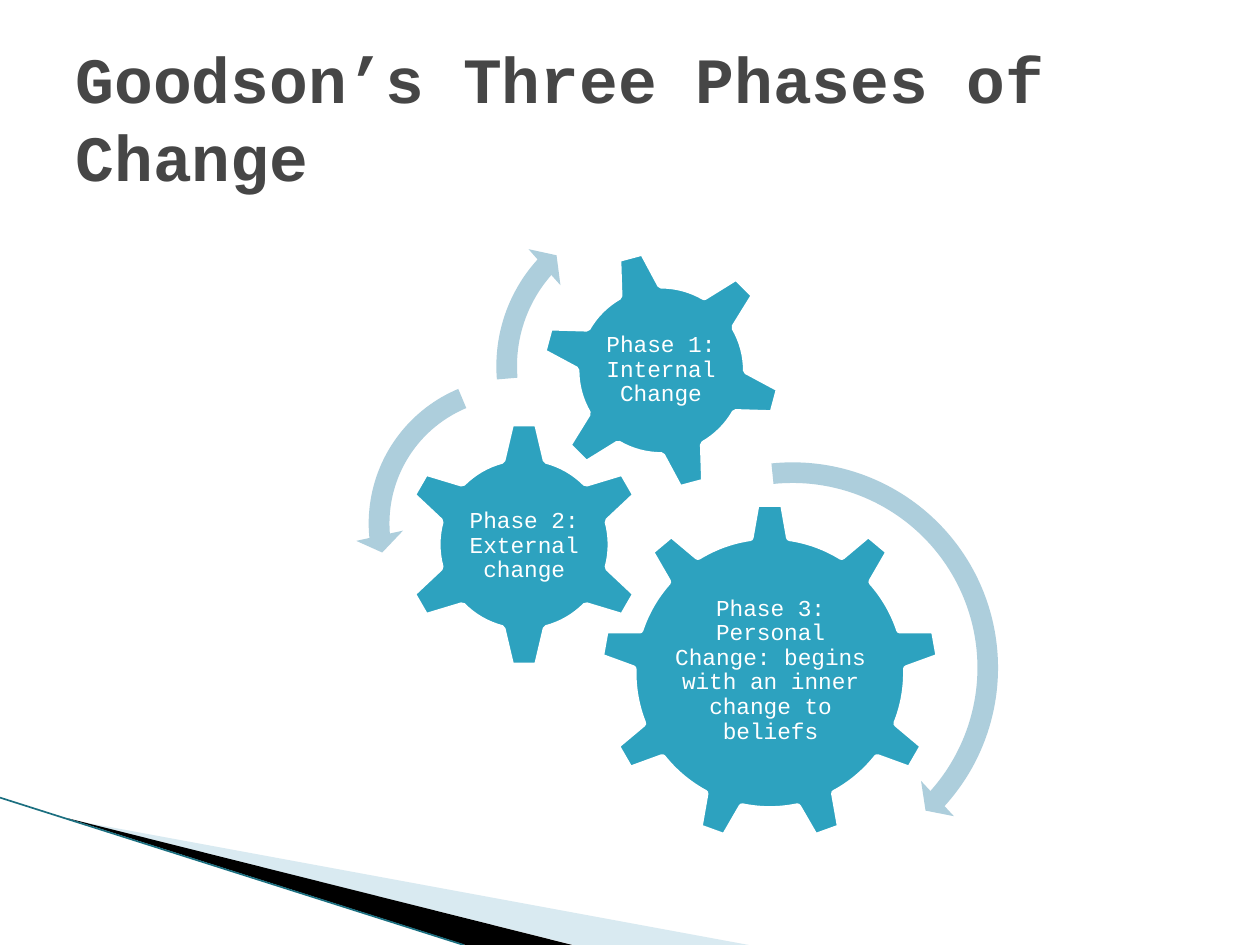
from lxml import etree
from pptx import Presentation
from pptx.dml.color import RGBColor
from pptx.enum.shapes import MSO_CONNECTOR, MSO_SHAPE
from pptx.enum.text import MSO_ANCHOR, MSO_AUTO_SIZE, PP_ALIGN
from pptx.oxml.ns import qn
from pptx.util import Pt

GEAR_SIX, GEAR_NINE = MSO_SHAPE.GEAR_6, MSO_SHAPE.GEAR_9
ARROW, LEFT_ARROW = MSO_SHAPE.CIRCULAR_ARROW, MSO_SHAPE.LEFT_CIRCULAR_ARROW
STRAIGHT = MSO_CONNECTOR.STRAIGHT
MIDDLE, NO_FIT = MSO_ANCHOR.MIDDLE, MSO_AUTO_SIZE.NONE
LEFT, CENTER = PP_ALIGN.LEFT, PP_ALIGN.CENTER
FONT = "Courier New"
COLORS = {
    "title": "464646", "gear": "2DA2BF", "arrow": "ADCEDC",
    "white": "FFFFFF", "black": "000000", "wedge": "A0CBDC", "edge": "1B6F80",
}


class GearPage:
    """Holds the style and the current slide, and draws each kind of element."""

    def __init__(self, deck):
        self.page = deck.slides.add_slide(deck.slide_layouts[5])
        self.shapes = self.page.shapes

    def color(self, name):
        return RGBColor.from_string(COLORS[name])

    def paint(self, shape, fill):
        shape.shadow.inherit = False
        shape.fill.solid()
        shape.fill.fore_color.rgb = self.color(fill)
        shape.line.fill.background()

    def add_text(self, frame, text, size, color, align, bold=False):
        frame.word_wrap = True
        frame.auto_size = NO_FIT
        frame.vertical_anchor = MIDDLE
        para = frame.paragraphs[0]
        para.alignment = align
        span = para.add_run()
        span.text = text
        span.font.name, span.font.size, span.font.bold = FONT, Pt(size), bold
        span.font.color.rgb = self.color(color)
        return para

    def title(self, text, left, top, width, height):
        box = self.shapes.title
        box.left, box.top = Pt(left), Pt(top)
        box.width, box.height = Pt(width), Pt(height)
        self.add_text(box.text_frame, text, 36.9, "title", LEFT, bold=True)

    def wedge(self, points, fill, opacity=100):
        start, *rest = [(Pt(x), Pt(y)) for x, y in points]
        builder = self.shapes.build_freeform(*start)
        builder.add_line_segments(rest)
        shape = builder.convert_to_shape()
        self.paint(shape, fill)
        if opacity < 100:
            tint = shape._element.spPr.find(qn("a:solidFill"))[0]
            etree.SubElement(tint, qn("a:alpha"), val=str(opacity * 1000))

    def edge(self, x1, y1, x2, y2):
        line = self.shapes.add_connector(STRAIGHT, Pt(x1), Pt(y1), Pt(x2), Pt(y2))
        line.line.color.rgb = self.color("edge")
        line.line.width = Pt(0.95)
        etree.SubElement(line._element.spPr, qn("a:effectLst"))

    def gear(self, kind, left, top, size, text, label, rotation=0):
        shape = self.shapes.add_shape(kind, Pt(left), Pt(top), Pt(size), Pt(size))
        self.paint(shape, "gear")
        shape.line.color.rgb = self.color("white")
        shape.line.width = Pt(4.33)
        shape.rotation = rotation
        box = self.shapes.add_textbox(*[Pt(length) for length in label])
        frame = box.text_frame
        frame.margin_left = frame.margin_right = Pt(1.3)
        frame.margin_top = frame.margin_bottom = Pt(1.3)
        self.add_text(frame, text, 13, "white", CENTER).line_spacing = 0.9

    def arrow(self, kind, left, top, size, adjustments):
        shape = self.shapes.add_shape(kind, Pt(left), Pt(top), Pt(size), Pt(size))
        self.paint(shape, "arrow")
        for index, value in enumerate(adjustments):
            shape.adjustments[index] = value


def main():
    deck = Presentation()
    deck.slide_width, deck.slide_height = Pt(720), Pt(540)
    page = GearPage(deck)
    page.wedge([(39.6, 468.3), (428, 540), (328, 540)], "wedge", opacity=40)
    page.wedge([(38.2, 467.5), (327, 540), (266, 540)], "black")
    page.edge(0, 455.8, 265, 540)
    page.title("Goodson’s Three Phases of Change", 36, 21.6, 648, 90)

    page.gear(GEAR_NINE, 342, 286.6, 195.8,
              "Phase 3: Personal Change: begins with an inner change to beliefs",
              (381.6, 332.6, 117.4, 100.8))
    page.gear(GEAR_SIX, 228.2, 239.8, 142.6, "Phase 2: External change",
              (264.2, 276.5, 70.6, 70.6))
    page.gear(GEAR_SIX, 308, 141.8, 139.7, "Phase 1: Internal Change",
              (338.4, 172.1, 78.5, 78.5), rotation=345)

    page.arrow(ARROW, 327.6, 256.3, 250.6, (0.047, 2.99, 25.236, 158.454, 0.055))
    page.arrow(LEFT_ARROW, 203, 208.1, 182.2, (0.065, 4.3, 104.891, 148.378, 0.075))
    page.arrow(ARROW, 275.8, 110.9, 196.6, (0.06, 3.941, 133.138, 105.082, 0.07))
    deck.save("out.pptx")


if __name__ == "__main__":
    main()
